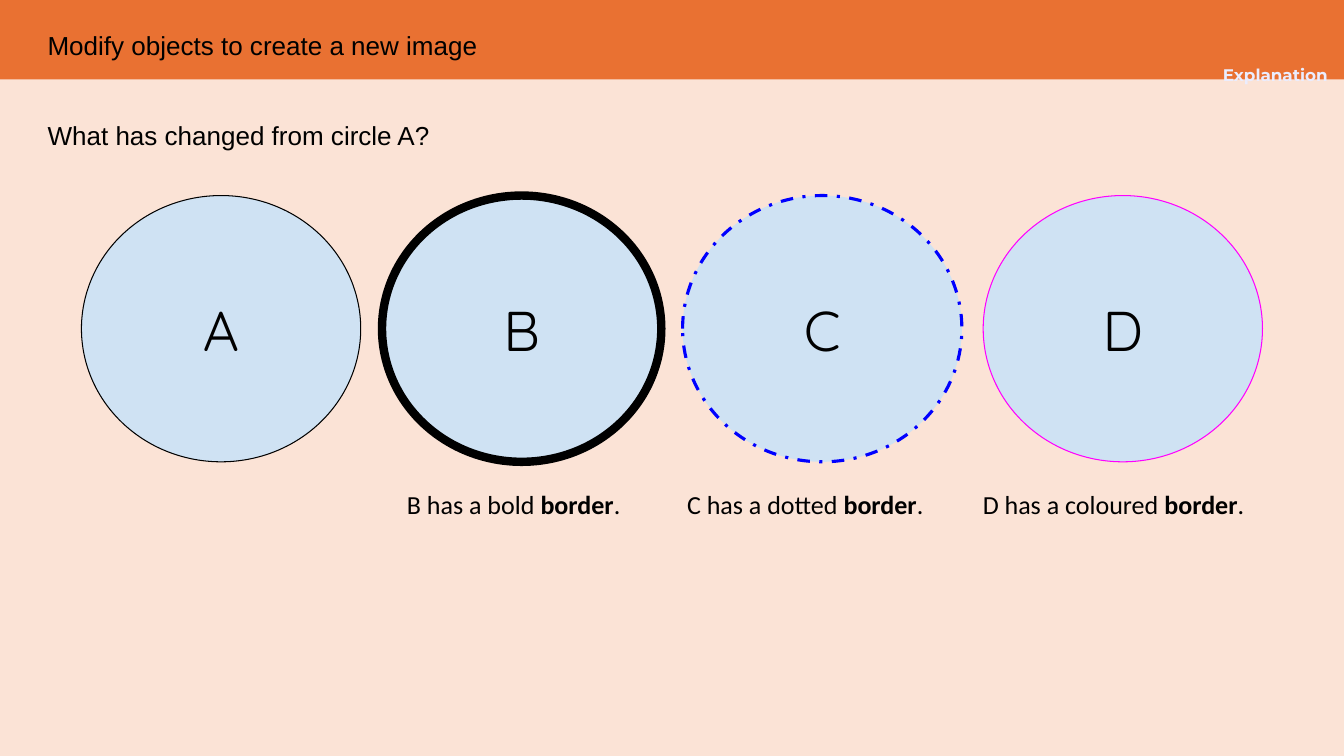
from pptx import Presentation
from pptx.dml.color import RGBColor
from pptx.enum.dml import MSO_LINE
from pptx.enum.shapes import MSO_SHAPE
from pptx.enum.text import MSO_ANCHOR, PP_ALIGN
from pptx.util import Pt


def rgb(value):
    return RGBColor.from_string(value)


def add_text(x, y, w, h, runs, font, size=18.6, color="000000"):
    """Add a text box without margins; runs are (text, bold) pairs."""
    tf = s.shapes.add_textbox(Pt(x), Pt(y), Pt(w), Pt(h)).text_frame
    tf.word_wrap = True
    tf.margin_left = tf.margin_right = tf.margin_top = tf.margin_bottom = 0
    p = tf.paragraphs[0]
    p.font.name, p.font.size = font, Pt(size)
    p.font.color.rgb = rgb(color)
    for text, bold in runs:
        r = p.add_run()
        r.text, r.font.bold = text, bold
    return tf


prs = Presentation()
prs.slide_width, prs.slide_height = Pt(960), Pt(540)
s = prs.slides.add_slide(prs.slide_layouts[6])
s.background.fill.solid()
s.background.fill.fore_color.rgb = rgb("FBE3D6")

# Header band and its label
band = s.shapes.add_shape(MSO_SHAPE.RECTANGLE, 0, 0, prs.slide_width, Pt(56.8))
band.shadow.inherit = False
band.fill.solid()
band.fill.fore_color.rgb = rgb("E97132")
band.line.fill.background()
label = add_text(862, 46.2, 98, 14.4, [("Explanation", True)],
                 "Montserrat", 12, "EBEDFE")
label.paragraphs[0].alignment = PP_ALIGN.CENTER

# Title and question
title = add_text(34, 16, 749, 32.4,
                 [("Modify objects to create a new image", False)], "Arial")
title.vertical_anchor = MSO_ANCHOR.MIDDLE
add_text(34, 85.2, 865, 35.3, [("What has changed from circle A?", False)], "Arial")

# Circles: letter, border colour, width, dash
circles = [
    ("A", "000000", 0.75, None),
    ("B", "000000", 6, None),
    ("C", "0000FF", 2.25, MSO_LINE.DASH_DOT),
    ("D", "FF00FF", 0.75, None),
]
for i, (letter, color, width, dash) in enumerate(circles):
    sp = s.shapes.add_shape(MSO_SHAPE.OVAL, Pt(58.2 + i * 214.7), Pt(139.7),
                            Pt(199.5), Pt(190.2))
    sp.shadow.inherit = False
    sp.fill.solid()
    sp.fill.fore_color.rgb = rgb("CFE2F3")
    sp.line.color.rgb = rgb(color)
    sp.line.width = Pt(width)
    if dash:
        sp.line.dash_style = dash
    tf = sp.text_frame
    tf.margin_left = tf.margin_right = tf.margin_top = tf.margin_bottom = Pt(9.6)
    tf.vertical_anchor = MSO_ANCHOR.MIDDLE
    p = tf.paragraphs[0]
    p.text, p.alignment = letter, PP_ALIGN.CENTER
    p.font.name, p.font.size = "Quicksand", Pt(40)
    p.font.color.rgb = rgb("000000")

# Captions under the changed circles
captions = [
    (290.7, 164, "B has a bold "),
    (490.8, 177, "C has a dotted "),
    (702, 199.5, "D has a coloured "),
]
for x, w, text in captions:
    add_text(x, 349, w, 36, [(text, False), ("border", True), (".", False)],
             "Calibri")

prs.save("out.pptx")
